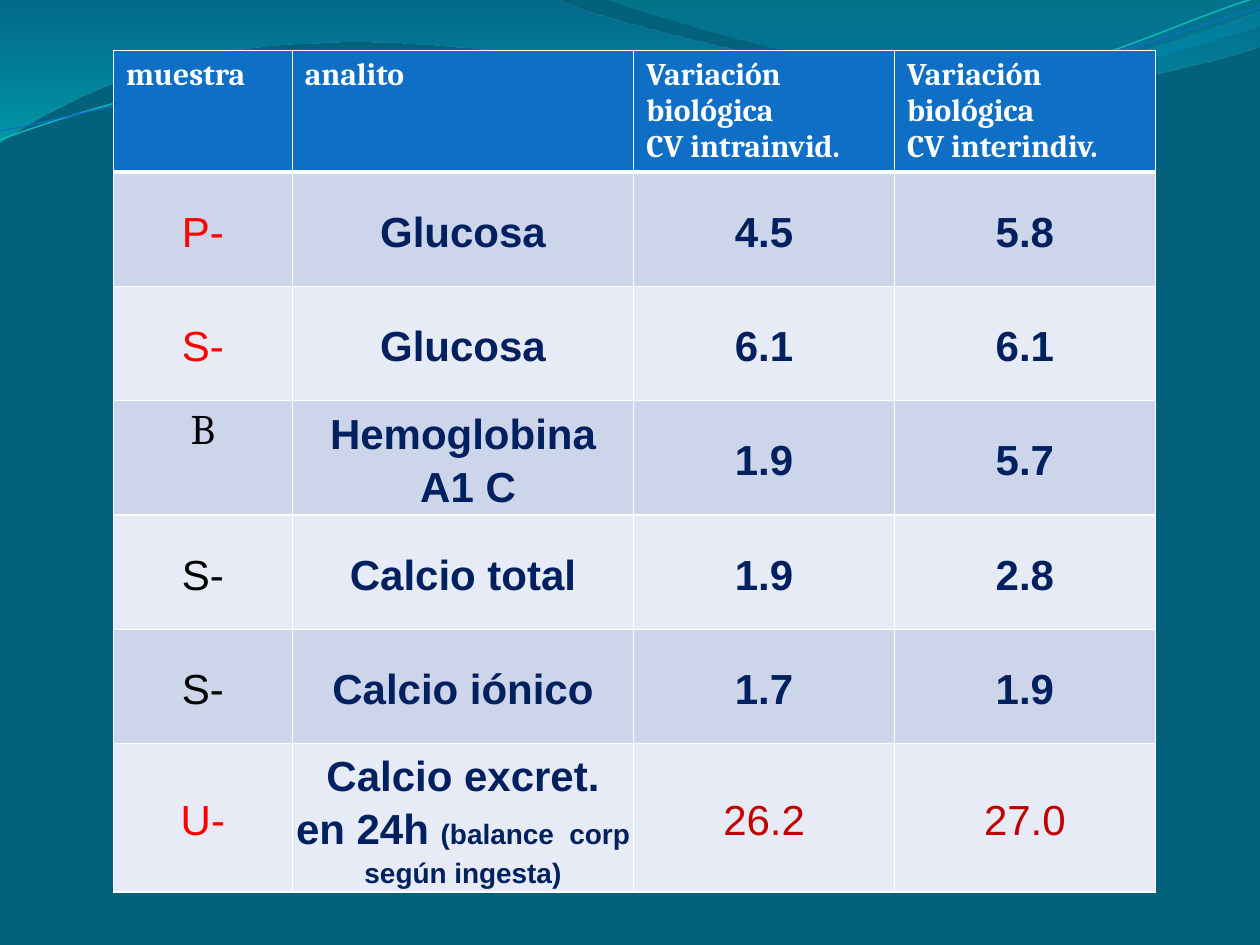
from math import cos, radians, sin

from lxml.etree import SubElement
from pptx import Presentation
from pptx.dml.color import RGBColor
from pptx.enum.text import MSO_ANCHOR as Anchor, PP_ALIGN as Align
from pptx.oxml.ns import qn
from pptx.util import Inches, Pt

COLORS = {
    "background": "04617B", "blue": "0F6FC6", "aqua": "0AB8BF",
    "white": "FFFFFF", "black": "000000", "navy": "002060",
    "red": "FF0000", "dark red": "C00000",
    "band dark": "CCD5EA", "band light": "E7EBF5",
    "wave blue": "0074A1", "wave cyan": "00C6CF",
    "wave teal": "00A1A9", "wave azure": "008BBF",
}

# Waves: a start point, then segments of 2 numbers (line) or 6 (Bézier curve).
LARGE_WAVE = [(0, 0), (4.4, -0.01), (4.76, 0.17, 6.64, 0.63, 7.58, 0.63),
              (8.53, 0.63, 9.58, 0.26, 10, 0.09), (10.01, 0.36),
              (9.83, 0.44, 8.7, 0.76, 7.46, 0.75),
              (6.22, 0.75, 3.82, 0.28, 2.57, 0.34),
              (1.29, 0.36, 0.46, 0.83, -0.01, 1.13), (0, 0)]
SMALL_WAVE = [(4.79, -0.01), (5.09, 0.11, 6.82, 0.62, 7.69, 0.65),
              (8.56, 0.69, 9.61, 0.32, 10, 0.21), (10, 0), (4.79, -0.01)]
AQUA_LINE = [(0, 1.11), (0.48, 0.93, 1.58, 0.57, 2.77, 0.52),
             (3.95, 0.47, 5.93, 0.89, 7.13, 0.8),
             (8.33, 0.71, 9.38, 0.15, 9.98, -0.02)]
BLUE_LINE = [(0, 1.04), (0.47, 0.96, 1.64, 0.61, 2.83, 0.56),
             (4.03, 0.51, 5.97, 0.84, 7.17, 0.75),
             (8.36, 0.67, 9.41, 0.21, 10, 0.06)]
LINE_TILT = 2.7

HEADERS = [["muestra"], ["analito"],
           ["Variación biológica", "CV intrainvid."],
           ["Variación biológica", "CV interindiv."]]
# Sample, sample colour, analyte paragraphs, intra- and interindividual CV
ANALYTES = [
    ("P-", "red", ["Glucosa"], "4.5", "5.8"),
    ("S-", "red", ["Glucosa"], "6.1", "6.1"),
    ("B", "black", ["Hemoglobina", " A1 C"], "1.9", "5.7"),
    ("S-", "black", ["Calcio total"], "1.9", "2.8"),
    ("S-", "black", ["Calcio iónico"], "1.7", "1.9"),
    ("U-", "red", ["Calcio excret.", "en 24h "], "26.2", "27.0"),
]
CALCIUM_NOTE = "(balance  corp según ingesta)"
COL_WIDTHS = [1.42, 2.71, 2.07, 2.07]
ROWS_HEIGHT, FRAME_HEIGHT = 6.35, 6.8


def rgb(name):
    return RGBColor.from_string(COLORS[name])


def turn(path, degrees, center):
    """Rotate every point of a path clockwise around the center."""
    c, s = cos(radians(degrees)), sin(radians(degrees))
    cx, cy = center
    turned = []
    for seg in path:
        pairs = zip(seg[::2], seg[1::2])
        turned.append(tuple(v for x, y in pairs for v in (
            cx + (x - cx) * c - (y - cy) * s, cy + (x - cx) * s + (y - cy) * c)))
    return turned


class SlideBuilder:
    body_font = "Arial"
    head_font = "Cambria"

    def __init__(self, prs):
        self.slide = prs.slides.add_slide(prs.slide_layouts[6])
        fill = self.slide.background.fill
        fill.solid()
        fill.fore_color.rgb = rgb("background")

    def outline(self, path, close):
        """Draw all points as lines, then join each curve's three into a Bézier."""
        points = [(Inches(x), Inches(y)) for seg in path
                  for x, y in zip(seg[::2], seg[1::2])]
        builder = self.slide.shapes.build_freeform(*points[0])
        builder.add_line_segments(points[1:], close=close)
        sp = builder.convert_to_shape()
        sp.shadow.inherit = False
        lines = iter(list(sp._element.iter(qn("a:lnTo"))))
        for seg in path[1:]:
            first = next(lines)
            if len(seg) == 6:
                first.tag = qn("a:cubicBezTo")
                for _ in range(2):
                    line = next(lines)
                    first.append(line[0])
                    line.getparent().remove(line)
        return sp

    def wave(self, path, stops):
        """Add a vertical gradient wave; stops are (position, colour, opacity %)."""
        sp = self.outline(path, True)
        sp.line.fill.background()
        sp.fill.gradient()
        sp.fill.gradient_angle = 270
        for stop, (position, color, _) in zip(sp.fill.gradient_stops, stops):
            stop.position = position
            stop.color.rgb = rgb(color)
        grad = sp._element.spPr.find(qn("a:gradFill"))
        for clr, (_, _, opacity) in zip(grad.iter(qn("a:srgbClr")), stops):
            SubElement(clr, qn("a:alpha"), val=str(opacity * 1000))

    def curve(self, path, center, color, width):
        sp = self.outline(turn(path, LINE_TILT, center), False)
        sp.rotation = -LINE_TILT
        sp.fill.background()
        sp.line.color.rgb = rgb(color)
        sp.line.width = Pt(width)

    def table(self, left, top, widths, rows):
        frame = self.slide.shapes.add_table(
            rows, len(widths), Inches(left), Inches(top),
            Inches(sum(widths)), Inches(ROWS_HEIGHT))
        for col, width in zip(frame.table.columns, widths):
            col.width = Inches(width)
        frame.height = Inches(FRAME_HEIGHT)
        return frame.table

    def borders(self, cell, top=1, bottom=1):
        tcPr = cell._tc.get_or_add_tcPr()
        for side, width in (("L", 1), ("R", 1), ("T", top), ("B", bottom)):
            ln = SubElement(tcPr, qn(f"a:ln{side}"), w=str(Pt(width)))
            fill = SubElement(ln, qn("a:solidFill"))
            SubElement(fill, qn("a:srgbClr"), val=COLORS["white"])

    def cell(self, cell, lines, fill, color, bold=True, size=24, font=body_font,
             align=Align.CENTER):
        cell.fill.solid()
        cell.fill.fore_color.rgb = rgb(fill)
        tf = cell.text_frame
        tf.text = "\n".join(lines)
        for p in tf.paragraphs:
            p.alignment = align
            p.font.name, p.font.size, p.font.bold = font, Pt(size), bold
            p.font.color.rgb = rgb(color)
            if font == self.body_font:
                p.line_spacing = 1.15
        if font == self.body_font:
            cell.vertical_anchor = Anchor.MIDDLE
            cell.margin_left = cell.margin_right = Inches(0.02)
            cell.margin_top = cell.margin_bottom = Inches(0.02)


def main():
    prs = Presentation()
    prs.slide_width, prs.slide_height = Inches(10), Inches(7.5)
    s = SlideBuilder(prs)

    s.wave(LARGE_WAVE, [(0, "wave blue", 45), (1, "wave cyan", 55)])
    s.wave(SMALL_WAVE, [(0, "wave teal", 30), (0.8, "wave azure", 45)])
    s.curve(AQUA_LINE, (4.99, 0.58), "aqua", 0.85)
    s.curve(BLUE_LINE, (5, 0.59), "blue", 0.75)

    tbl = s.table(0.9, 0.4, COL_WIDTHS, len(ANALYTES) + 1)
    for col, lines in enumerate(HEADERS):
        head = tbl.cell(0, col)
        s.borders(head, bottom=3)
        s.cell(head, lines, "blue", "white", size=18, font=s.head_font,
               align=Align.LEFT)

    for row, (sample, color, analyte, intra, inter) in enumerate(ANALYTES, 1):
        band = "band dark" if row % 2 else "band light"
        cells = [tbl.cell(row, col) for col in range(len(COL_WIDTHS))]
        for cell in cells:
            s.borders(cell, top=3 if row == 1 else 1)
        font = s.head_font if sample == "B" else s.body_font
        s.cell(cells[0], [sample], band, color, bold=False, font=font)
        s.cell(cells[1], analyte, band, "navy")
        urine = sample == "U-"
        for cell, value in zip(cells[2:], (intra, inter)):
            s.cell(cell, [value], band, "dark red" if urine else "navy",
                   bold=not urine)

    r = tbl.cell(len(ANALYTES), 1).text_frame.paragraphs[-1].add_run()
    r.text = CALCIUM_NOTE
    r.font.size = Pt(16)

    prs.save("out.pptx")


if __name__ == "__main__":
    main()
